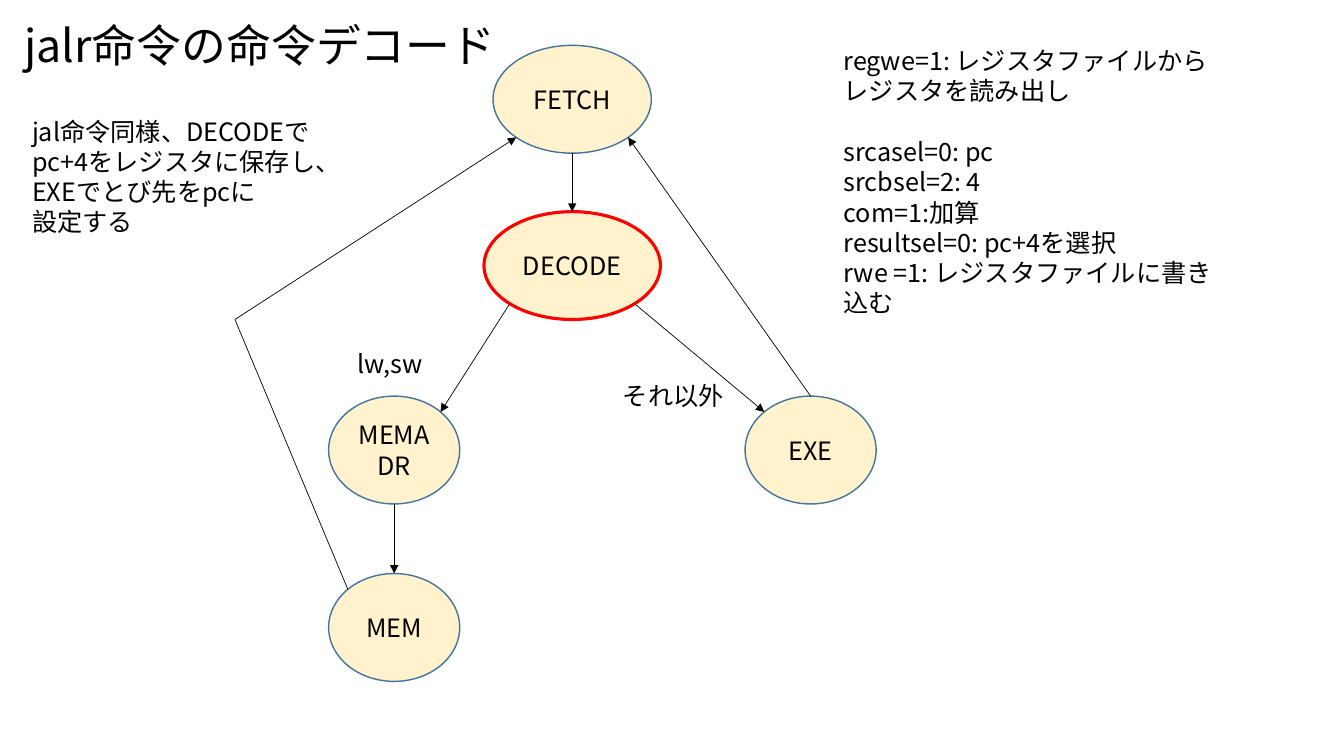
from math import cos, radians, sin

from lxml.etree import SubElement
from pptx import Presentation
from pptx.dml.color import RGBColor
from pptx.enum.shapes import MSO_CONNECTOR, MSO_SHAPE
from pptx.enum.text import MSO_ANCHOR, PP_ALIGN
from pptx.oxml.ns import qn
from pptx.util import Inches, Pt

FONT = "Noto Sans CJK JP"
BLACK, CREAM, BLUE, RED = "000000", "FFF2CC", "43739E", "FF0000"

# Angles on an ellipse, clockwise from the right
RIGHT_BOTTOM, BOTTOM, LEFT_BOTTOM = 45, 90, 135
LEFT_TOP, TOP, RIGHT_TOP = 225, 270, 315

# State name: left, top, width, height
STATES = {
    "FETCH": (4.89, 0.45, 1.57, 1.07),
    "DECODE": (4.8, 2.1, 1.75, 1.07),
    "MEMADR": (3.26, 3.93, 1.3, 1.07),
    "EXE": (7.39, 3.93, 1.3, 1.07),
    "MEM": (3.26, 5.69, 1.3, 1.07),
}
TRANSITIONS = [
    ("FETCH", BOTTOM, "DECODE", TOP),
    ("DECODE", LEFT_BOTTOM, "MEMADR", RIGHT_TOP),
    ("DECODE", RIGHT_BOTTOM, "EXE", LEFT_TOP),
    ("MEMADR", BOTTOM, "MEM", TOP),
    ("EXE", TOP, "FETCH", RIGHT_BOTTOM),
]
RETURN_BEND = (2.33, 3.17)


def color(value):
    return RGBColor.from_string(value)


def add_text(p, text, size=18):
    r = p.add_run()
    r.text = text
    r.font.size = Pt(size)
    r.font.name = FONT
    r.font.color.rgb = color(BLACK)
    SubElement(r.font._element, qn("a:ea")).set("typeface", FONT)


def add_lines(slide, box, lines):
    tf = slide.shapes.add_textbox(*map(Inches, box)).text_frame
    tf.word_wrap = True
    for i, line in enumerate(lines):
        p = tf.paragraphs[0] if i == 0 else tf.add_paragraph()
        add_text(p, line)
    return tf


def add_title(slide, box, text):
    sp = slide.shapes.title
    sp.left, sp.top, sp.width, sp.height = map(Inches, box)
    tf = sp.text_frame
    tf.word_wrap = True
    tf.vertical_anchor = MSO_ANCHOR.TOP
    p = tf.paragraphs[0]
    p.alignment = PP_ALIGN.LEFT
    p.line_spacing = 1.0
    add_text(p, text, 32)


def add_state(slide, box, name, active):
    sp = slide.shapes.add_shape(MSO_SHAPE.OVAL, *map(Inches, box))
    sp.shadow.inherit = False
    sp.fill.solid()
    sp.fill.fore_color.rgb = color(CREAM)
    sp.line.color.rgb = color(RED if active else BLUE)
    sp.line.width = Pt(2.25 if active else 1)
    tf = sp.text_frame
    tf.word_wrap = True
    tf.vertical_anchor = MSO_ANCHOR.MIDDLE
    p = tf.paragraphs[0]
    p.alignment = PP_ALIGN.CENTER
    add_text(p, name)


def edge_point(name, angle):
    left, top, width, height = STATES[name]
    a = radians(angle)
    return left + width / 2 * (1 + cos(a)), top + height / 2 * (1 + sin(a))


def add_line(slide, start, end, arrow=True):
    line = slide.shapes.add_connector(
        MSO_CONNECTOR.STRAIGHT, *map(Inches, (*start, *end)))
    line.line.color.rgb = color(BLACK)
    line.line.width = Pt(0.5)
    if arrow:
        SubElement(line.line._get_or_add_ln(), qn("a:tailEnd")).set("type", "triangle")
    SubElement(line._element.spPr, qn("a:effectLst"))


def add_state_diagram(slide, active):
    for name, box in STATES.items():
        add_state(slide, box, name, name == active)
    for source, out_angle, target, in_angle in TRANSITIONS:
        add_line(slide, edge_point(source, out_angle), edge_point(target, in_angle))
    # Return from MEM to FETCH around the left side
    add_line(slide, edge_point("MEM", LEFT_TOP), RETURN_BEND, arrow=False)
    add_line(slide, RETURN_BEND, edge_point("FETCH", LEFT_BOTTOM))
    # Branch conditions
    add_lines(slide, (3.45, 3.41, 0.9, 0.4), ["lw,sw"])
    add_lines(slide, (6.08, 3.72, 1.3, 0.4), ["それ以外"])


def add_signals(slide, box):
    tf = add_lines(slide, box, [
        "regwe=1: レジスタファイルからレジスタを読み出し",
        "srcasel=0: pc",
        "srcbsel=2: 4",
        "com=1:加算",
        "resultsel=0: pc+4を選択",
        "rwe =1: レジスタファイルに書き込む",
    ])
    tf.paragraphs[1].space_before = Pt(22)


def main():
    prs = Presentation()
    prs.slide_width, prs.slide_height = Inches(13.33), Inches(7.5)
    slide = prs.slides.add_slide(prs.slide_layouts[5])
    add_title(slide, (0.14, 0.13, 4.9, 0.64), "jalr命令の命令デコード")
    add_state_diagram(slide, active="DECODE")
    add_signals(slide, (8.27, 0.4, 3.97, 3.13))
    # Explanation under the title
    add_lines(slide, (0.22, 1.1, 3.5, 1.31), [
        "jal命令同様、DECODEで",
        "pc+4をレジスタに保存し、",
        "EXEでとび先をpcに",
        "設定する",
    ])
    prs.save("out.pptx")


if __name__ == "__main__":
    main()
